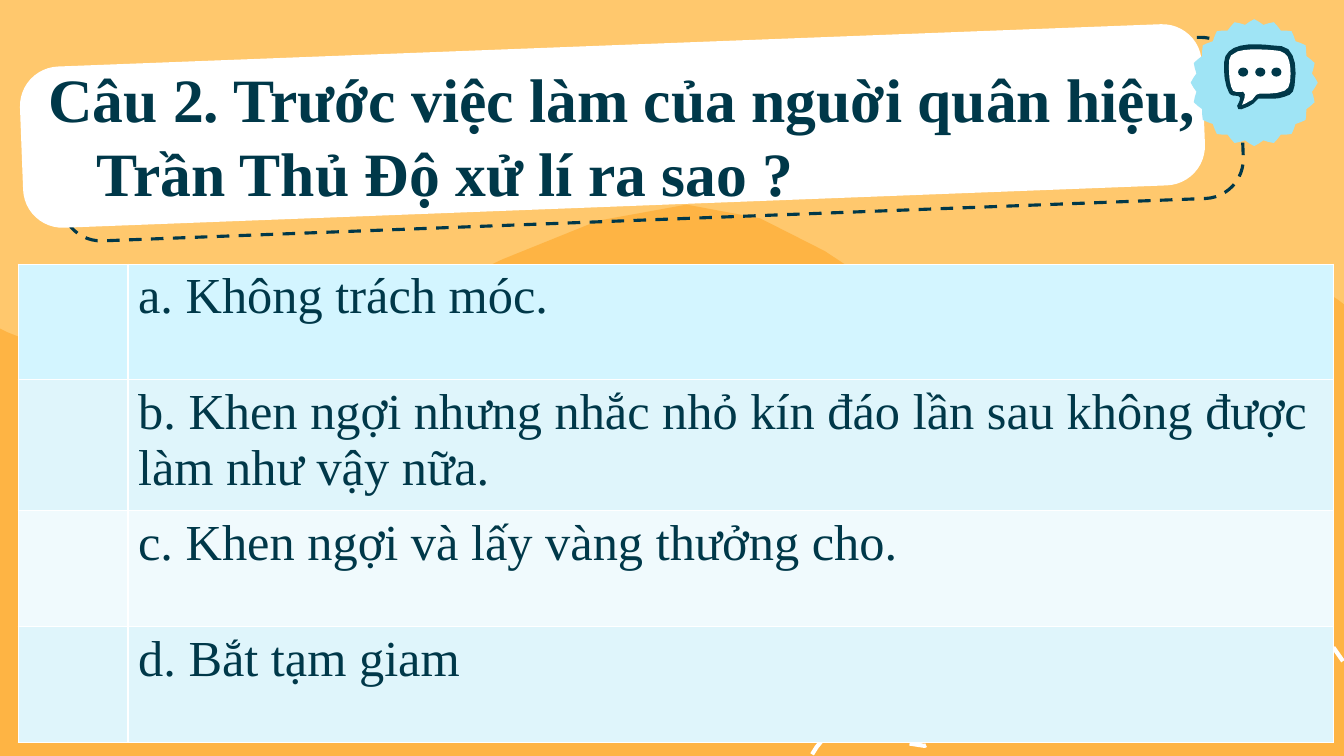
from math import cos, pi, sin

from pptx import Presentation
from pptx.dml.color import RGBColor
from pptx.enum.dml import MSO_LINE
from pptx.enum.shapes import MSO_SHAPE
from pptx.enum.text import MSO_ANCHOR, PP_ALIGN
from pptx.util import Inches, Pt

RECT, ROUND, OVAL = MSO_SHAPE.RECTANGLE, MSO_SHAPE.ROUNDED_RECTANGLE, MSO_SHAPE.OVAL
DASH, BOTTOM, LEFT = MSO_LINE.DASH, MSO_ANCHOR.BOTTOM, PP_ALIGN.LEFT
WIDTH, HEIGHT = 13.33, 7.5
FONT = "Times New Roman"
COLORS = {
    "sand": "FFC86D", "hill": "FEB444", "ink": "003849", "white": "FFFFFF",
    "badge": "9FE4F5", "head": "D3F5FF", "odd": "DFF5FB", "even": "F0FAFD",
}
TITLE = "Câu 2. Trước việc làm của nguời quân hiệu,\vTrần Thủ Độ xử lí ra sao ?"
ANSWERS = [
    ("a. Không trách móc.", "head"),
    ("b. Khen ngợi nhưng nhắc nhỏ kín đáo lần sau không được làm như vậy nữa.", "odd"),
    ("c. Khen ngợi và lấy vàng thưởng cho.", "even"),
    ("d. Bắt tạm giam", "odd"),
]

# Curves: a start point, then line ends (2 numbers) or Bezier segments (6 numbers),
# measured from the corner of the region's box
HILL = [
    (6.81, 0), (5.43, 0, 3.58, 1.53, 2.16, 1.58), (2.06, 1.58, 1.97, 1.59, 1.89, 1.59),
    (0.64, 1.59, 0, 1.23, 0, 1.23), (0, 4.59), (13.33, 4.59), (13.33, 0.99),
    (13.33, 0.99, 12.86, 0.59, 12.33, 0.59), (12.29, 0.59, 12.25, 0.59, 12.22, 0.59),
    (11.64, 0.65, 11.11, 1.14, 10.06, 1.3), (10.01, 1.3, 9.95, 1.31, 9.9, 1.31),
    (8.92, 1.31, 8.12, 0, 6.81, 0),
]
WAVE = [
    (13.32, 4.53), (13.2, 4.34, 13.04, 4.15, 12.9, 4.18),
    (12.73, 4.2, 12.76, 4.53, 12.56, 4.63), (12.33, 4.74, 12.17, 4.4, 11.92, 4.51),
    (11.71, 4.59, 11.75, 4.87, 11.56, 4.92), (11.34, 4.99, 11.22, 4.65, 10.97, 4.68),
    (10.72, 4.71, 10.75, 5.06, 10.49, 5.14), (10.19, 5.24, 10.03, 4.84, 9.7, 4.92),
    (9.42, 4.99, 9.44, 5.33, 9.17, 5.37), (8.9, 5.41, 8.76, 5.08, 8.48, 5.11),
    (8.27, 5.12, 8.11, 5.35, 8.02, 5.51),
]
RIM = [
    (0.67, 0.79), (0.62, 0.85, 0.57, 0.87, 0.54, 0.88), (0.5, 0.9, 0.46, 0.91, 0.46, 0.86),
    (0.47, 0.84, 0.49, 0.81, 0.49, 0.78), (0.48, 0.76, 0.46, 0.76, 0.44, 0.76),
    (0.41, 0.76, 0.39, 0.75, 0.38, 0.73), (0.35, 0.68, 0.33, 0.58, 0.33, 0.5),
    (0.33, 0.42, 0.33, 0.36, 0.38, 0.32), (0.42, 0.28, 0.48, 0.26, 0.58, 0.25),
    (0.65, 0.25, 0.74, 0.25, 0.8, 0.26), (0.92, 0.26, 0.98, 0.28, 1.01, 0.36),
    (1.04, 0.42, 1.05, 0.53, 1.03, 0.66), (1.02, 0.74, 0.99, 0.75, 0.93, 0.77),
    (0.88, 0.79, 0.82, 0.79, 0.8, 0.79), (0.67, 0.79),
]
BUBBLE = [
    (0.6, 0.3), (0.52, 0.31, 0.47, 0.3, 0.4, 0.36), (0.37, 0.4, 0.38, 0.46, 0.38, 0.53),
    (0.38, 0.6, 0.4, 0.69, 0.42, 0.71), (0.45, 0.73, 0.48, 0.72, 0.52, 0.72),
    (0.55, 0.74, 0.54, 0.77, 0.51, 0.85), (0.55, 0.84, 0.58, 0.81, 0.61, 0.8),
    (0.64, 0.77, 0.64, 0.74, 0.68, 0.74), (0.78, 0.74, 0.86, 0.74, 0.93, 0.71),
    (0.98, 0.69, 0.99, 0.63, 0.99, 0.54), (0.99, 0.47, 0.98, 0.41, 0.96, 0.37),
    (0.93, 0.33, 0.89, 0.31, 0.84, 0.31), (0.75, 0.3, 0.68, 0.3, 0.6, 0.3),
]


def rgb(name):
    return RGBColor.from_string(COLORS[name])


def paint(shape, fill=None, line=None, width=1):
    shape.shadow.inherit = False
    if fill:
        shape.fill.solid()
        shape.fill.fore_color.rgb = rgb(fill)
    else:
        shape.fill.background()
    if line:
        shape.line.color.rgb = rgb(line)
        shape.line.width = Pt(width)
        shape.line.dash_style = DASH
    else:
        shape.line.fill.background()


def block(slide, kind, x, y, w, h, **look):
    shape = slide.shapes.add_shape(kind, Inches(x), Inches(y), Inches(w), Inches(h))
    paint(shape, **look)
    return shape


def trace(curve, steps):
    """Turn a curve into the points of a polyline."""
    points = [curve[0]]
    for part in curve[1:]:
        if len(part) == 2:
            points.append(part)
            continue
        ends = [points[-1], part[:2], part[2:4], part[4:]]
        for step in range(1, steps + 1):
            t = step / steps
            u = 1 - t
            mix = (u ** 3, 3 * u * u * t, 3 * u * t * t, t ** 3)
            points.append(tuple(sum(m * e[i] for m, e in zip(mix, ends)) for i in (0, 1)))
    return points


def outline(slide, points, x, y, close=True, **look):
    spots = [(Inches(x + px), Inches(y + py)) for px, py in points]
    pen = slide.shapes.build_freeform(*spots[0])
    pen.add_line_segments(spots[1:], close=close)
    paint(pen.convert_to_shape(), **look)


def style(run, **looks):
    run.font.color.rgb = rgb("ink")
    for key, value in {"name": FONT, **looks}.items():
        setattr(run.font, key, value)


def scene(slide, x, y):
    """Hills and the dashed wave."""
    slide.background.fill.solid()
    slide.background.fill.fore_color.rgb = rgb("sand")
    outline(slide, trace(HILL, 5), x, y, fill="hill")
    block(slide, RECT, x, y + 4.11, WIDTH, 1.36, fill="hill")
    outline(slide, trace(WAVE, 4), x, y, close=False, line="white", width=3)


def banner(slide, x, y, w, h):
    """Tilted white card with its dashed echo."""
    looks = [(0.38, 0.13, {"line": "ink", "width": 2.25}), (0, 0, {"fill": "white"})]
    for dx, dy, look in looks:
        card = block(slide, ROUND, x + dx, y + dy, w, h, **look)
        card.adjustments[0] = 0.245
        card.rotation = 357.8


def badge(slide, x, y, size):
    """Scalloped seal with a speech bubble."""
    seal = []
    for step in range(80):
        turn = 2 * pi * step / 80
        reach = size / 2 - 0.025 + 0.025 * cos(20 * turn)
        seal.append((size / 2 + reach * sin(turn), size / 2 - reach * cos(turn)))
    outline(slide, seal, x, y, fill="badge")
    outline(slide, trace(RIM, 3), x, y, fill="ink")
    outline(slide, trace(BUBBLE, 3), x, y, fill="white")
    for dx in (0.47, 0.64, 0.8):
        block(slide, OVAL, x + dx, y + 0.48, 0.1, 0.09, fill="ink")


def title(slide, x, y, w, h):
    box = slide.shapes.add_textbox(Inches(x), Inches(y), Inches(w), Inches(h))
    frame = box.text_frame
    looks = {"word_wrap": True, "vertical_anchor": BOTTOM}
    looks.update({f"margin_{side}": Inches(0.1) for side in ("left", "top", "right", "bottom")})
    for key, value in looks.items():
        setattr(frame, key, value)
    para = frame.paragraphs[0]
    para.text = TITLE
    para.alignment = LEFT
    props = para._p.get_or_add_pPr()
    props.set("marL", str(Inches(0.67)))
    props.set("indent", str(Inches(-0.48)))
    for run in para.runs:
        style(run, size=Pt(44), bold=True)


def answers(slide, x, y, w, h):
    """Answer rows, with the white rules of the table style."""
    count = len(ANSWERS)
    frame = slide.shapes.add_table(count, 2, Inches(x), Inches(y), Inches(w), Inches(h))
    table = frame.table
    table.columns[0].width = Inches(1.09)
    table.columns[1].width = Inches(w - 1.09)
    for row, (text, color) in enumerate(ANSWERS):
        table.rows[row].height = Inches(h / count)
        for cell in table.rows[row].cells:
            cell.fill.solid()
            cell.fill.fore_color.rgb = rgb(color)
        run = table.cell(row, 1).text_frame.paragraphs[0].add_run()
        run.text = text
        style(run, size=Pt(36), bold=False)


def main():
    deck = Presentation()
    deck.slide_width, deck.slide_height = Inches(WIDTH), Inches(HEIGHT)
    slide = deck.slides.add_slide(deck.slide_layouts[6])
    scene(slide, 0, 2.03)
    banner(slide, 0.21, 0.45, 11.73, 1.6)
    badge(slide, 11.81, 0.19, 1.26)
    title(slide, 0.19, 1.52, 11.9, 0.65)
    answers(slide, 0.18, 2.62, 13.05, 4.59)
    deck.save("out.pptx")


if __name__ == "__main__":
    main()
